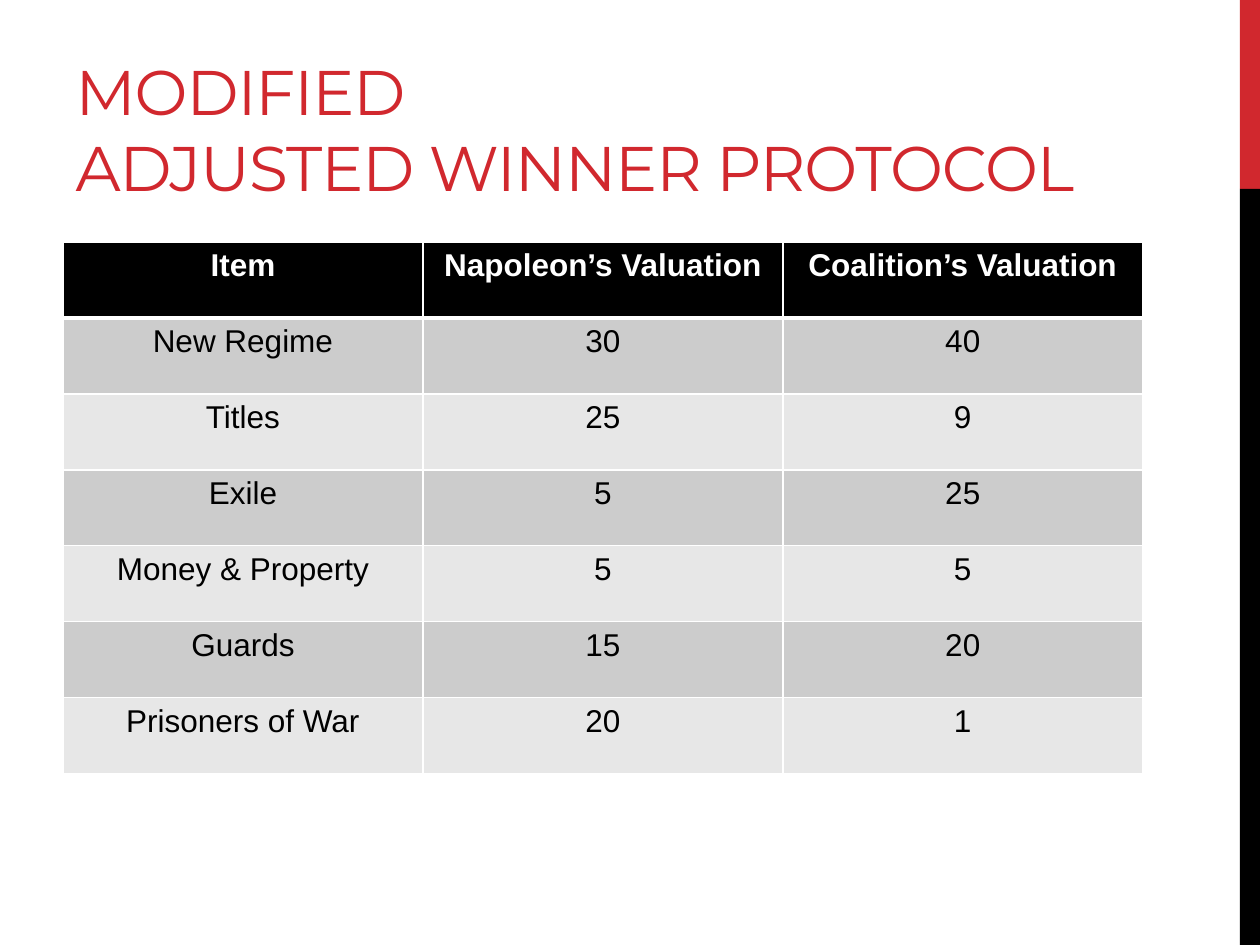
from copy import deepcopy
from pptx import Presentation
from pptx import util as u
from pptx.dml.color import RGBColor
from pptx.enum import shapes, text
from pptx.oxml import ns, xmlchemy

HUES = {"red": "D1282E", "black": "000000", "white": "FFFFFF",
        "dark": "CCCCCC", "light": "E7E7E7"}
ROWS = [
    ("Item", "Napoleon’s Valuation", "Coalition’s Valuation"),
    ("New Regime", "30", "40"),
    ("Titles", "25", "9"),
    ("Exile", "5", "25"),
    ("Money & Property", "5", "5"),
    ("Guards", "15", "20"),
    ("Prisoners of War", "20", "1"),
]


def hue(name):
    return RGBColor.from_string(HUES[name])


def paint(item, name):
    item.fill.solid()
    item.fill.fore_color.rgb = hue(name)


def write(frame, words, font="Arial", size=18, color="black", bold=False,
          align=text.PP_ALIGN.CENTER, track=None):
    para = frame.paragraphs[0]
    para.text = words
    para.alignment = align
    for run in para.runs:
        run.font.name = font
        run.font.size = u.Pt(size)
        run.font.bold = bold
        run.font.color.rgb = hue(color)
        if track is not None:
            run._r.get_or_add_rPr().set("spc", str(round(track * 100)))
    for gap in para._p.findall(ns.qn("a:br")):
        gap.append(deepcopy(para.runs[0]._r.rPr))


def add_bar(slide, top, height, color):
    bar = slide.shapes.add_shape(
        shapes.MSO_SHAPE.RECTANGLE, u.Inches(9.84), u.Inches(top),
        u.Inches(0.16), u.Inches(height))
    bar.shadow.inherit = False
    paint(bar, color)
    bar.line.fill.background()


def add_title(slide, words):
    title = slide.shapes.title
    title.left, title.top = u.Inches(0.5), u.Inches(0.17)
    title.width, title.height = u.Inches(9.01), u.Inches(1.5)
    frame = title.text_frame
    frame.word_wrap = True
    frame.auto_size = text.MSO_AUTO_SIZE.NONE
    frame.vertical_anchor = text.MSO_ANCHOR.BOTTOM
    write(frame, words, font="Montserrat", size=36, color="red",
          align=text.PP_ALIGN.LEFT, track=-0.6)


def edge(cell, **sides):
    props = cell._tc.get_or_add_tcPr()
    for spot, (side, width) in enumerate(sides.items()):
        line = xmlchemy.OxmlElement(f"a:ln{side}")
        line.set("w", str(u.Pt(width)))
        fill = xmlchemy.OxmlElement("a:solidFill")
        tint = xmlchemy.OxmlElement("a:srgbClr")
        tint.set("val", HUES["white"])
        fill.append(tint)
        line.append(fill)
        props.insert(spot, line)


def add_grid(slide, rows):
    grid = slide.shapes.add_table(
        len(rows), len(rows[0]), u.Inches(0.5), u.Inches(1.92),
        u.Inches(8.57), u.Inches(4.22)).table
    for r, row in enumerate(rows):
        head = r == 0
        back = "black" if head else ("light", "dark")[r % 2]
        for c, words in enumerate(row):
            cell = grid.cell(r, c)
            paint(cell, back)
            write(cell.text_frame, words, bold=head,
                  color="white" if head else "black")
            edge(cell, L=1, R=1, T=3 if r == 1 else 1, B=3 if head else 1)


def main():
    deck = Presentation()
    deck.slide_width, deck.slide_height = u.Inches(10), u.Inches(7.5)
    slide = deck.slides.add_slide(deck.slide_layouts[5])
    add_bar(slide, 0, 1.5, "red")
    add_bar(slide, 1.5, 6, "black")
    add_title(slide, "MODIFIED\vADJUSTED WINNER PROTOCOL")
    add_grid(slide, ROWS)
    deck.save("out.pptx")


if __name__ == "__main__":
    main()
